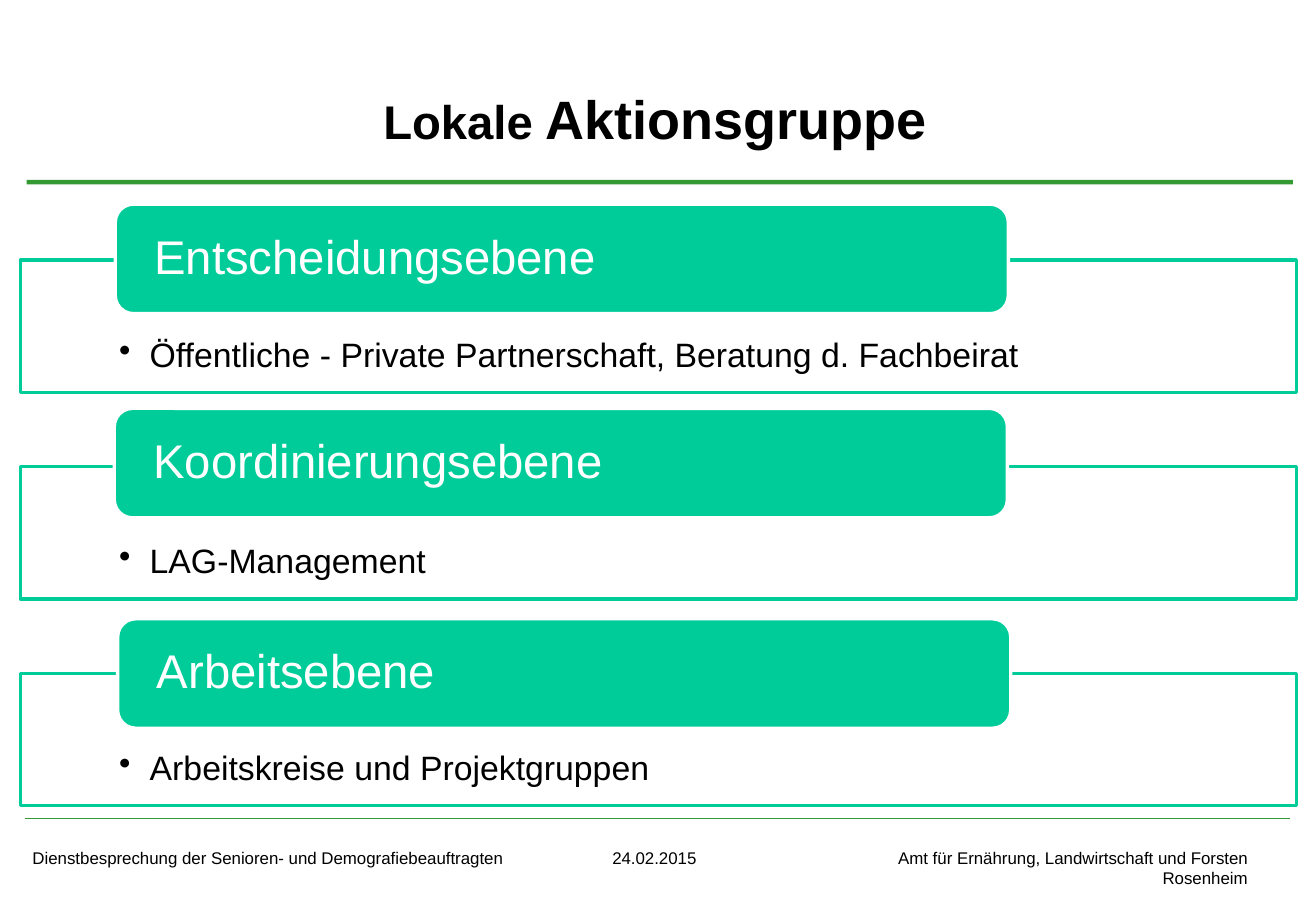
from lxml import etree
from pptx import Presentation
from pptx import util as u
from pptx.dml.color import RGBColor
from pptx.enum import shapes, text
from pptx.oxml import ns

BLACK = RGBColor(0x00, 0x00, 0x00)
WHITE = RGBColor(0xFF, 0xFF, 0xFF)
TEAL = RGBColor(0x00, 0xCC, 0x99)
GREEN = RGBColor(0x33, 0x99, 0x33)

LEFT, CENTER, RIGHT = text.PP_ALIGN.LEFT, text.PP_ALIGN.CENTER, text.PP_ALIGN.RIGHT
TOP, MIDDLE = text.MSO_ANCHOR.TOP, text.MSO_ANCHOR.MIDDLE

# Level: name, description, header left and header rise above the frame (cm)
LEVELS = [
    ("Entscheidungsebene",
     "Öffentliche - Private Partnerschaft, Beratung d. Fachbeirat", 1.98, 1.17),
    ("Koordinierungsebene", "LAG-Management", 1.96, 1.22),
    ("Arbeitsebene", "Arbeitskreise und Projektgruppen", 2.03, 1.14),
]
LEVEL_STEP = 4.32


def cm_box(left, top, width, height):
    return [u.Cm(value) for value in (left, top, width, height)]


def set_attributes(target, values):
    for name, value in values.items():
        setattr(target, name, value)


def add_run(paragraph, words, size, color=BLACK, bold=False):
    run = paragraph.add_run()
    run.text = words
    set_attributes(run.font, {"name": "Arial", "size": u.Pt(size), "bold": bold})
    run.font.color.rgb = color


def format_frame(frame, anchor=TOP, insets=(0.25, 0.13, 0.25, 0.13)):
    sides = ("margin_left", "margin_top", "margin_right", "margin_bottom")
    set_attributes(frame, {"word_wrap": True, "vertical_anchor": anchor})
    set_attributes(frame, dict(zip(sides, map(u.Cm, insets))))


def add_text(slide, box, lines, align=LEFT, anchor=TOP):
    """Add a text box; each line is a list of (words, size, bold) runs."""
    frame = slide.shapes.add_textbox(*cm_box(*box)).text_frame
    format_frame(frame, anchor)
    for index, runs in enumerate(lines):
        paragraph = frame.add_paragraph() if index else frame.paragraphs[0]
        paragraph.alignment = align
        for words, size, bold in runs:
            add_run(paragraph, words, size, bold=bold)


def add_block(slide, kind, box, fill, line=None):
    shape = slide.shapes.add_shape(kind, *cm_box(*box))
    shape.shadow.inherit = False
    shape.fill.solid()
    shape.fill.fore_color.rgb = fill
    if line is None:
        shape.line.fill.background()
    else:
        shape.line.color.rgb = line
        shape.line.width = u.Pt(2)
    return shape


def fill_block(shape, words, size, color, anchor, insets):
    format_frame(shape.text_frame, anchor, insets)
    paragraph = shape.text_frame.paragraphs[0]
    set_attributes(paragraph, {"alignment": LEFT, "line_spacing": 0.9})
    add_run(paragraph, words, size, color)
    return paragraph


def add_bullet(paragraph, indent):
    properties = paragraph._p.get_or_add_pPr()
    properties.set("marL", str(u.Cm(indent)))
    properties.set("indent", str(-u.Cm(indent)))
    bullet = etree.SubElement(properties, ns.qn("a:buChar"))
    bullet.set("char", "•")


def add_header(slide, left, top, width):
    # Title with the thick rule below it
    add_text(slide, (left, top, width, 2.21),
             [[("Lokale", 28, True), (" Aktionsgruppe", 32, True)]], CENTER, MIDDLE)
    add_block(slide, shapes.MSO_SHAPE.RECTANGLE,
              (left + 0.13, top + 2.39, width - 0.07, 0.1), GREEN)


def add_level(slide, left, top, width, level):
    name, description, header_left, rise = level
    # Outlined frame with the description
    frame = add_block(slide, shapes.MSO_SHAPE.RECTANGLE,
                      (left, top, width, 2.77), WHITE, TEAL)
    paragraph = fill_block(frame, description, 20, BLACK, TOP, (2.06, 1.63, 2.06, 0.41))
    add_bullet(paragraph, 0.64)
    # Rounded header over the upper edge
    header = add_block(slide, shapes.MSO_SHAPE.ROUNDED_RECTANGLE,
                       (left + header_left, top - rise, 18.67, 2.29), TEAL, WHITE)
    fill_block(header, name, 28, WHITE, MIDDLE, (0.71, 0, 0.71, 0))


def add_footer(slide, left, top, width):
    # Thin rule
    start, end, height = u.Cm(left + 0.1), u.Cm(left + width), u.Cm(top)
    rule = slide.shapes.add_connector(shapes.MSO_CONNECTOR.STRAIGHT,
                                      start, height, end, height)
    rule.line.color.rgb = GREEN
    rule.line.width = u.Pt(0.75)
    etree.SubElement(rule._element.spPr, ns.qn("a:effectLst"))
    # Event, date and office
    parts = [
        (0, 18.06, ["Dienstbesprechung der Senioren- und Demografiebeauftragten"], LEFT),
        (12.12, 6.53, ["24.02.2015"], LEFT),
        (17.5, 8.4, ["Amt für Ernährung, Landwirtschaft und Forsten", "Rosenheim"], RIGHT),
    ]
    for offset, part_width, lines, align in parts:
        add_text(slide, (left + offset, top + 0.48, part_width, 1.12),
                 [[(line, 10, False)] for line in lines], align)


def main():
    presentation = Presentation()
    presentation.slide_width, presentation.slide_height = u.Cm(27.51), u.Cm(19.05)
    slide = presentation.slides.add_slide(presentation.slide_layouts[6])
    add_header(slide, 0.43, 1.37, 26.54)
    for index, level in enumerate(LEVELS):
        add_level(slide, 0.43, 5.44 + index * LEVEL_STEP, 26.67, level)
    add_footer(slide, 0.43, 17.12, 26.54)
    presentation.save("out.pptx")


if __name__ == "__main__":
    main()
